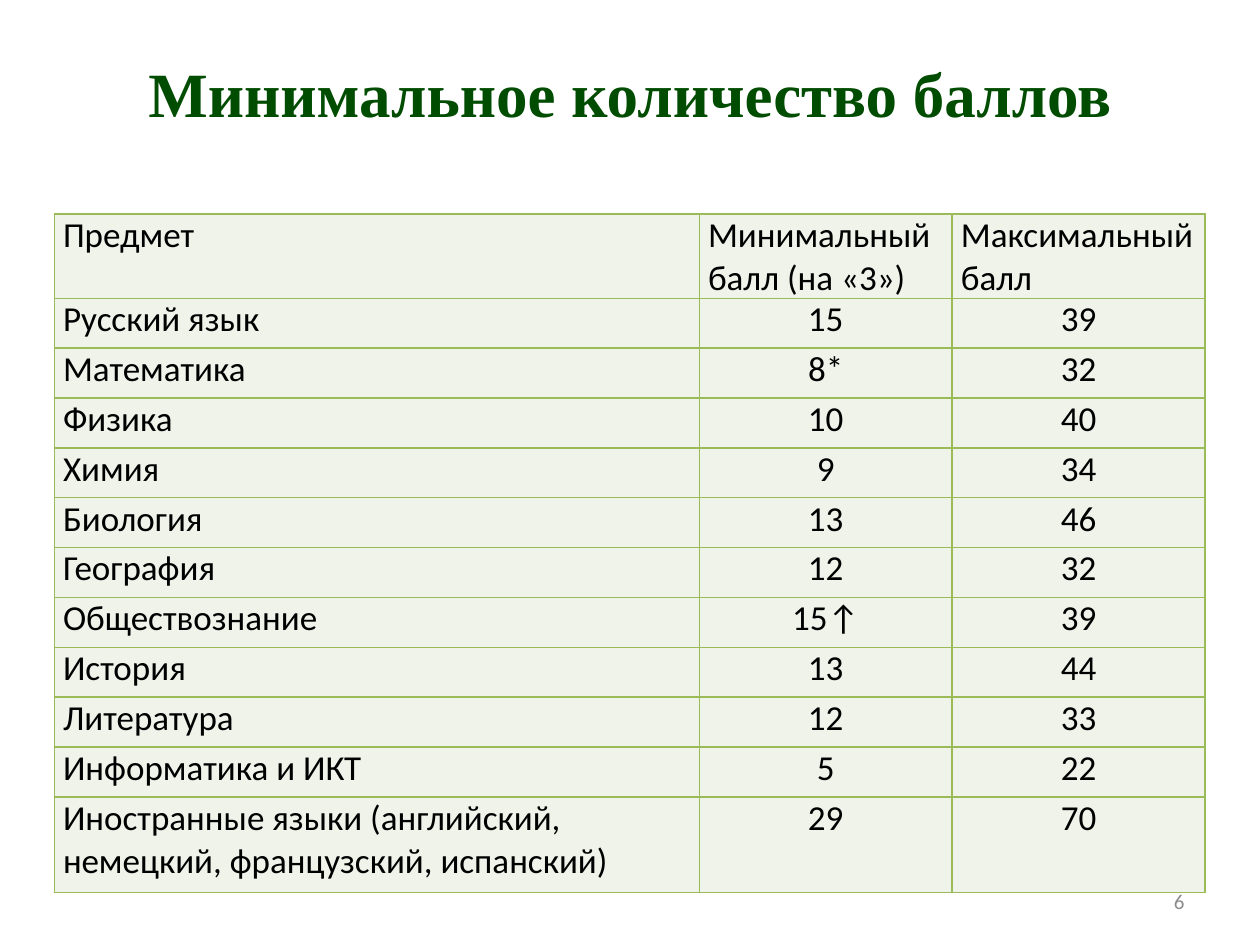
from lxml import etree
from pptx import Presentation
from pptx.dml.color import RGBColor
from pptx.enum import text as t
from pptx.oxml.ns import qn
from pptx.util import Pt

DARK_GREEN = RGBColor(0x00, 0x4C, 0x00)
BORDER_GREEN = RGBColor(0x9B, 0xBB, 0x59)
PALE_GREEN = RGBColor(0xEF, 0xF3, 0xEA)
GRAY = RGBColor(0x8C, 0x8C, 0x8C)
BLACK = RGBColor(0, 0, 0)

COLUMN_WIDTHS = (368.6, 144.5, 144.5)
HEADER_HEIGHT, SUBJECT_HEIGHT, LANGUAGES_HEIGHT = 28.8, 28.5, 54.7

HEADER = ("Предмет", "Минимальный балл (на «3»)", "Максимальный балл")
SCORES = (
    ("Русский язык", "15", "39"),
    ("Математика", "8*", "32"),
    ("Физика", "10", "40"),
    ("Химия", "9", "34"),
    ("Биология", "13", "46"),
    ("География", "12", "32"),
    ("Обществознание", "15↑", "39"),
    ("История", "13", "44"),
    ("Литература", "12", "33"),
    ("Информатика и ИКТ", "5", "22"),
    ("Иностранные языки (английский, немецкий, французский, испанский)", "29", "70"),
)


def write(frame, words, size=20, font="Calibri", color=BLACK, bold=False,
          align=t.PP_ALIGN.LEFT):
    paragraph = frame.paragraphs[0]
    paragraph.alignment = align
    run = paragraph.add_run()
    run.text = words
    run.font.size = Pt(size)
    run.font.name = font
    run.font.bold = bold
    run.font.color.rgb = color


def add_label(slide, box, words, bottom_inset=3.6, **style):
    """Text box centred vertically; a deeper bottom inset lifts the text."""
    frame = slide.shapes.add_textbox(*map(Pt, box)).text_frame
    frame.word_wrap = True
    frame.vertical_anchor = t.MSO_ANCHOR.MIDDLE
    frame.margin_bottom = Pt(bottom_inset)
    write(frame, words, **style)


def set_borders(cell, color, width):
    """Add the side lines ahead of the fill, as the schema orders them."""
    properties = cell._tc.get_or_add_tcPr()
    for position, side in enumerate(("lnL", "lnR", "lnT", "lnB")):
        line = etree.Element(qn(f"a:{side}"), w=str(Pt(width)))
        fill = etree.SubElement(line, qn("a:solidFill"))
        etree.SubElement(fill, qn("a:srgbClr"), val=str(color))
        properties.insert(position, line)


def format_cell(cell, words, align):
    cell.margin_left = cell.margin_right = Pt(5)
    cell.margin_top = cell.margin_bottom = 0
    cell.fill.solid()
    cell.fill.fore_color.rgb = PALE_GREEN
    set_borders(cell, BORDER_GREEN, 1)
    write(cell.text_frame, words, align=align)


def add_score_table(slide, box):
    rows = (HEADER, *SCORES)
    heights = [HEADER_HEIGHT] + [SUBJECT_HEIGHT] * (len(SCORES) - 1) + [LANGUAGES_HEIGHT]
    table = slide.shapes.add_table(len(rows), len(HEADER), *map(Pt, box)).table
    for column, width in zip(table.columns, COLUMN_WIDTHS):
        column.width = Pt(width)
    for row, height in zip(table.rows, heights):
        row.height = Pt(height)
    for r, row in enumerate(rows):
        for c, words in enumerate(row):
            is_score = r > 0 and c > 0
            format_cell(table.cell(r, c), words,
                        t.PP_ALIGN.CENTER if is_score else t.PP_ALIGN.LEFT)


def main():
    deck = Presentation()
    deck.slide_width, deck.slide_height = Pt(720), Pt(540)
    slide = deck.slides.add_slide(deck.slide_layouts[6])
    add_label(slide, (36, 21.6, 648, 90), "Минимальное количество баллов",
              bottom_inset=31, size=36, font="Times New Roman",
              color=DARK_GREEN, bold=True, align=t.PP_ALIGN.CENTER)
    add_label(slide, (516, 500.5, 168, 28.8), "6", size=12, color=GRAY,
              align=t.PP_ALIGN.RIGHT)
    add_score_table(slide, (31, 122.4, sum(COLUMN_WIDTHS), 387.4))
    deck.save("out.pptx")


if __name__ == "__main__":
    main()
